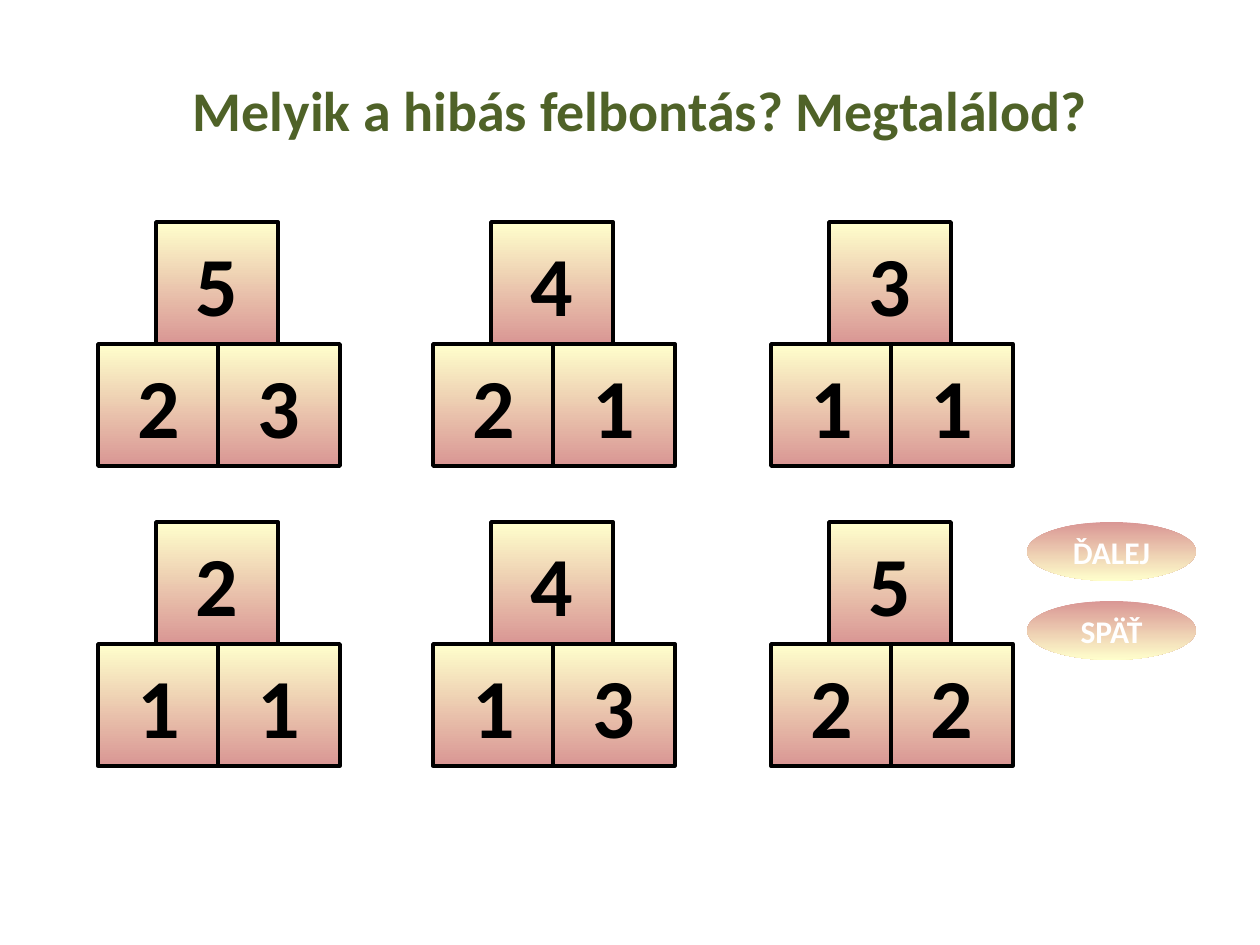
from pptx import Presentation
from pptx.dml.color import RGBColor
from pptx.enum.shapes import MSO_SHAPE
from pptx.enum.text import MSO_ANCHOR, PP_ALIGN
from pptx.util import Pt

RECT, OVAL = MSO_SHAPE.RECTANGLE, MSO_SHAPE.OVAL
TOP, MIDDLE = MSO_ANCHOR.TOP, MSO_ANCHOR.MIDDLE
CENTER = PP_ALIGN.CENTER

PX = 914400 / 126  # EMU in one px
COLORS = {
    "title": "4F6228",
    "cream": "FFFFCC",
    "rose": "D99694",
    "digit": "000000",
    "button": "FFFFFF",
}

# Pyramids: top number, then the two numbers it is split into
PYRAMIDS = [
    [(5, 2, 3), (4, 2, 1), (3, 1, 1)],
    [(2, 1, 1), (4, 1, 3), (5, 2, 2)],
]
COLUMN_LEFTS = (98, 433, 771)
ROW_TOPS = (222, 522)
TILE = 122
TILE_OFFSETS = ((58, 0), (0, TILE), (120, TILE))

BUTTONS = (("SPÄŤ", 601), ("ĎALEJ", 522))


def px(*values):
    return [round(v * PX) for v in values]


def rgb(name):
    return RGBColor.from_string(COLORS[name])


def write_text(sp, text, size, color, anchor=MIDDLE):
    tf = sp.text_frame
    tf.word_wrap = True
    tf.vertical_anchor = anchor
    p = tf.paragraphs[0]
    p.alignment = CENTER
    r = p.add_run()
    r.text = text
    font = {"name": "Calibri", "size": Pt(size), "bold": True}
    for key, value in font.items():
        setattr(r.font, key, value)
    r.font.color.rgb = rgb(color)


def add_gradient_shape(s, kind, box, upper, lower):
    sp = s.shapes.add_shape(kind, *px(*box))
    sp.shadow.inherit = False
    sp.fill.gradient()
    sp.fill.gradient_angle = 270  # from top to bottom
    for stop, position, name in zip(sp.fill.gradient_stops, (0, 1), (upper, lower)):
        stop.position = position
        stop.color.rgb = rgb(name)
    return sp


def add_title(s, text):
    sp = s.shapes.add_textbox(*px(69, 69, 1143, 130))
    write_text(sp, text, 32, "title", TOP)


def add_button(s, text, top):
    sp = add_gradient_shape(s, OVAL, (1027, top, 169, 59), "rose", "cream")
    sp.line.fill.background()
    write_text(sp, text, 18, "button")


def add_pyramid(s, left, top, numbers):
    for number, (dx, dy) in zip(numbers, TILE_OFFSETS):
        box = (left + dx, top + dy, TILE, TILE)
        sp = add_gradient_shape(s, RECT, box, "cream", "rose")
        sp.line.color.rgb = rgb("digit")
        sp.line.width = Pt(2)
        write_text(sp, str(number), 48, "digit")


def main():
    prs = Presentation()
    prs.slide_width, prs.slide_height = px(1260, 945)
    s = prs.slides.add_slide(prs.slide_layouts[6])

    # Navigation buttons
    for text, top in BUTTONS:
        add_button(s, text, top)

    add_title(s, "Melyik a hibás felbontás? Megtalálod?")

    # Grid of number pyramids
    for top, row in zip(ROW_TOPS, PYRAMIDS):
        for left, numbers in zip(COLUMN_LEFTS, row):
            add_pyramid(s, left, top, numbers)

    prs.save("out.pptx")


if __name__ == "__main__":
    main()
